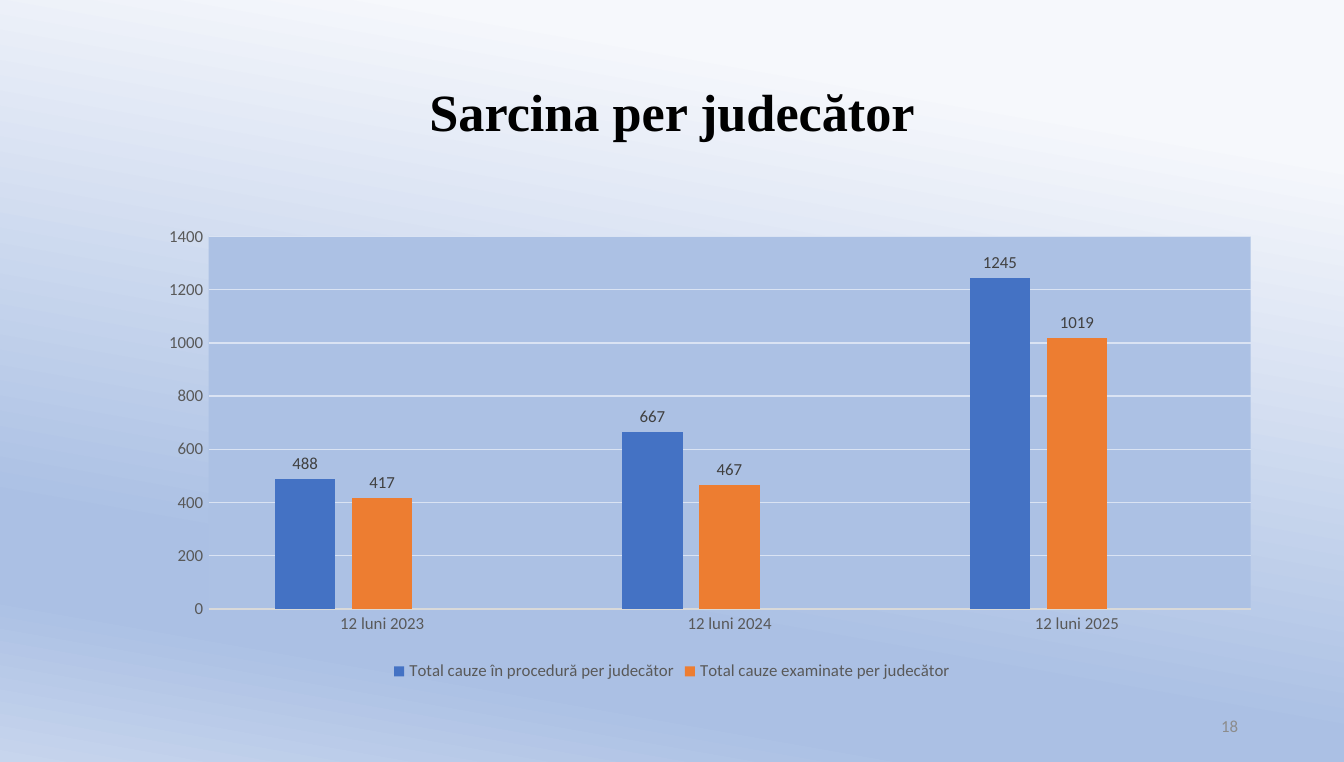
from copy import deepcopy

from lxml.etree import SubElement
from pptx import Presentation
from pptx.chart.data import CategoryChartData
from pptx.dml.color import RGBColor
from pptx.enum.chart import XL_CHART_TYPE, XL_LABEL_POSITION, XL_LEGEND_POSITION, XL_TICK_MARK
from pptx.enum.text import MSO_ANCHOR, PP_ALIGN
from pptx.oxml import parse_xml
from pptx.oxml.ns import nsdecls, qn
from pptx.util import Inches, Pt

WIDTH, HEIGHT = Inches(10), Inches(5.67)
MARGIN, CONTENT = 0.069, 0.862
COLORS = {
    "title": "000000", "page": "8C8C8C", "axis_text": "595959", "label": "404040",
    "axis_line": "D9D9D9", "grid": "DAE3F3", "plot": "ACC1E4",
    "pending": "4472C4", "examined": "ED7D31", "spare": "A5A5A5",
}
BACKDROP = [(0.16, "F6F8FC"), (0.74, "ABC0E4"), (0.83, "ABC0E4"), (1, "C7D5ED")]
PERIODS = ["12 luni 2023", "12 luni 2024", "12 luni 2025"]
CASELOAD = [
    ("Total cauze în procedură per judecător", (488, 667, 1245), "pending"),
    ("Total cauze examinate per judecător", (417, 467, 1019), "examined"),
    ("Series 3", (None, None, None), "spare"),
]


def rgb(name):
    """Return the named palette colour."""
    return RGBColor.from_string(COLORS[name])


def share(left, top, width, height):
    """Turn shares of the slide into lengths."""
    return [round(part * side) for part, side in zip((left, top, width, height), (WIDTH, HEIGHT) * 2)]


def style_font(font, size, color, name="Calibri", bold=False):
    """Set the look of a font."""
    font.size, font.name, font.bold = Pt(size), name, bold
    font.color.rgb = rgb(color)


def style_line(line, color):
    """Draw a thin line in a palette colour."""
    line.width = Pt(0.75)
    line.color.rgb = rgb(color)


def paint_background(slide):
    """Fill the slide with the slanted gradient."""
    fill = slide.background.fill
    fill.gradient()
    fill.gradient_angle = 260
    stop_list = next(slide.element.iter(qn("a:gsLst")))
    for _ in BACKDROP[2:]:
        stop_list.append(deepcopy(stop_list[0]))
    for stop, (position, color) in zip(fill.gradient_stops, BACKDROP):
        stop.color.rgb = RGBColor.from_string(color)
        stop.position = position


def add_text(slide, box, text, align, **look):
    """Add one line of text, centred vertically in its box."""
    frame = slide.shapes.add_textbox(*share(*box)).text_frame
    frame.word_wrap = True
    frame.vertical_anchor = MSO_ANCHOR.MIDDLE
    frame.text = text
    line = frame.paragraphs[0]
    line.alignment = align
    line.line_spacing = 0.9
    style_font(line.runs[0].font, **look)


def style_axis(axis):
    """Remove the ticks of an axis and set its font."""
    axis.major_tick_mark = axis.minor_tick_mark = XL_TICK_MARK.NONE
    style_font(axis.tick_labels.font, 9, "axis_text")


def place_plot(chart, **bounds):
    """Fix the inner plot area and fill it."""
    area = chart.element.find(".//" + qn("c:plotArea"))
    for old in area.findall(qn("c:layout")):
        area.remove(old)
    layout = parse_xml(f"<c:layout {nsdecls('c')}><c:manualLayout/></c:layout>")
    modes = {"layoutTarget": "inner", "xMode": "edge", "yMode": "edge"}
    for tag, value in {**modes, **bounds}.items():
        SubElement(layout[0], qn(f"c:{tag}")).set("val", str(value))
    area.insert(0, layout)
    area.append(parse_xml(
        f"<c:spPr {nsdecls('c', 'a')}><a:solidFill>"
        f"<a:srgbClr val=\"{COLORS['plot']}\"/></a:solidFill></c:spPr>"))


def add_legend(chart, hidden):
    """Put the legend below the plot without the hidden entry."""
    chart.has_legend = True
    legend = chart.legend
    legend.position = XL_LEGEND_POSITION.BOTTOM
    legend.include_in_layout = False
    style_font(legend.font, 9, "axis_text")
    entry = parse_xml(
        f"<c:legendEntry {nsdecls('c')}><c:idx val=\"{hidden}\"/>"
        "<c:delete val=\"1\"/></c:legendEntry>")
    legend._element.find(qn("c:legendPos")).addnext(entry)


def add_caseload_chart(slide, box):
    """Add the clustered columns of cases per judge."""
    data = CategoryChartData()
    data.categories = PERIODS
    for name, cases, _ in CASELOAD:
        data.add_series(name, cases)
    chart = slide.shapes.add_chart(XL_CHART_TYPE.COLUMN_CLUSTERED, *share(*box), data).chart
    chart.has_title = False
    style_font(chart.font, 10, "title")
    periods, cases_axis = chart.category_axis, chart.value_axis
    style_axis(periods)
    style_line(periods.format.line, "axis_line")
    style_axis(cases_axis)
    cases_axis.format.line.fill.background()
    cases_axis.minimum_scale, cases_axis.maximum_scale, cases_axis.major_unit = 0, 1400, 200
    style_line(cases_axis.major_gridlines.format.line, "grid")
    columns = chart.plots[0]
    columns.gap_width, columns.overlap, columns.vary_by_categories = 219, -27, False
    for series, (_, _, color) in zip(columns.series, CASELOAD):
        series.format.fill.solid()
        series.format.fill.fore_color.rgb = rgb(color)
        labels = series.data_labels
        labels.show_value = True
        labels.position = XL_LABEL_POSITION.OUTSIDE_END
        style_font(labels.font, 9, "label")
    add_legend(chart, hidden=2)
    place_plot(chart, x=0.1, y=0.07, w=0.9, h=0.77)


def main():
    """Build the slide and save it."""
    deck = Presentation()
    deck.slide_width, deck.slide_height = WIDTH, HEIGHT
    slide = deck.slides.add_slide(deck.slide_layouts[6])
    paint_background(slide)
    add_text(slide, (MARGIN, 0.053, CONTENT, 0.194), "Sarcina per judecător", PP_ALIGN.CENTER,
             size=28, color="title", name="Times New Roman", bold=True)
    add_text(slide, (0.706, 0.928, 0.225, 0.053), "18", PP_ALIGN.RIGHT, size=9, color="page")
    add_caseload_chart(slide, (MARGIN, 0.266, CONTENT, 0.635))
    deck.save("out.pptx")


if __name__ == "__main__":
    main()
